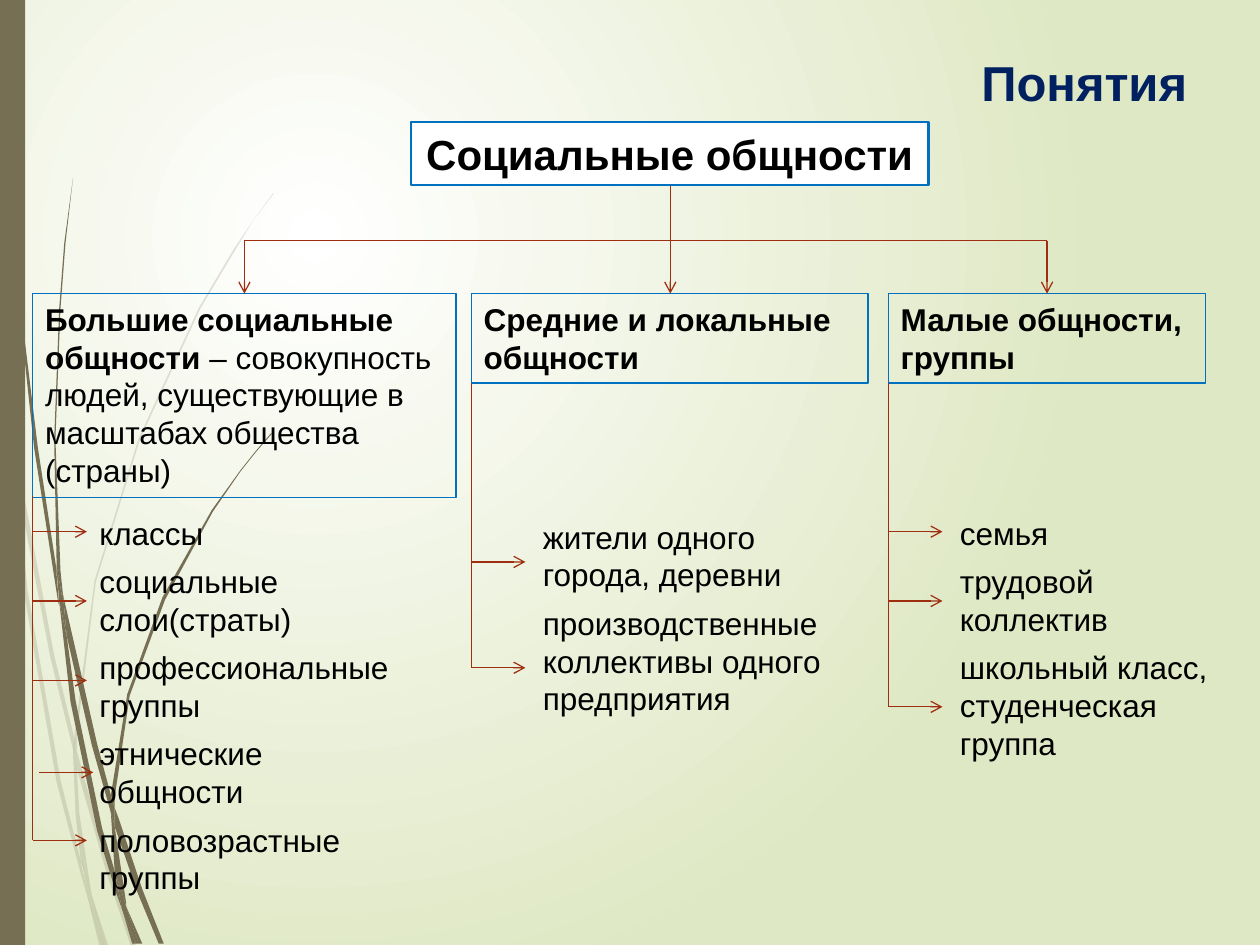
"""Build the slide on social communities: a three-branch diagram on a green backdrop."""
from lxml import etree
from pptx import Presentation
from pptx.dml.color import RGBColor
from pptx.enum.shapes import MSO_CONNECTOR, MSO_SHAPE
from pptx.enum.text import MSO_ANCHOR, MSO_AUTO_SIZE, PP_ALIGN
from pptx.oxml.ns import qn
from pptx.util import Inches, Pt

RECT, STRAIGHT = MSO_SHAPE.RECTANGLE, MSO_CONNECTOR.STRAIGHT
TOP, MIDDLE = MSO_ANCHOR.TOP, MSO_ANCHOR.MIDDLE
LEFT, CENTER, RIGHT = PP_ALIGN.LEFT, PP_ALIGN.CENTER, PP_ALIGN.RIGHT
COLORS = {"white": "FFFFFF", "green": "DFE8C4", "stalk": "766F54", "border": "0070C0",
          "arrow": "9E2E0F", "title": "002060", "text": "000000"}
RGB = {name: RGBColor.from_string(value) for name, value in COLORS.items()}


def add_text(tf, text, size=18, color="text", bold=False, align=LEFT, anchor=TOP,
             before=0, wrap=True, tail=""):
    tf.word_wrap = wrap
    tf.vertical_anchor = anchor
    for i, line in enumerate(text.split("\n")):
        p = tf.paragraphs[0] if i == 0 else tf.add_paragraph()
        p.alignment = align
        p.space_before = Pt(before)
        for words, is_bold in ((line, bold), (tail, False)):
            if words:
                r = p.add_run()
                r.text = words
                r.font.name = "Arial"
                r.font.size = Pt(size)
                r.font.bold = is_bold
                r.font.color.rgb = RGB[color]


def add_line(x1, y1, x2, y2, arrow=True):
    c = s.shapes.add_connector(STRAIGHT, Inches(x1), Inches(y1), Inches(x2), Inches(y2))
    c.line.color.rgb = RGB["arrow"]
    c.line.width = Pt(0.75)
    if arrow:
        etree.SubElement(c.line._get_or_add_ln(), qn("a:tailEnd"), type="arrow")
    etree.SubElement(c._element.spPr, qn("a:effectLst"))


prs = Presentation()
prs.slide_width, prs.slide_height = Inches(10), Inches(7.5)
s = prs.slides.add_slide(prs.slide_layouts[5])

fill = s.background.fill
fill.gradient()
for stop, name, position in zip(fill.gradient_stops, ("white", "green"), (0, 1)):
    stop.color.rgb = RGB[name]
    stop.position = position
grad = s._element.find(".//" + qn("a:gradFill"))
grad.remove(grad.find(qn("a:lin")))
circle = etree.SubElement(grad, qn("a:path"), path="circle")
etree.SubElement(circle, qn("a:fillToRect"), l="50000", t="50000", r="100000", b="100000")

pale_stalks = [
    [(.08, 3.5), (.06, 3.22), (0, 2.82), (0, 2.99), (.07, 3.44)],
    [(.4, 5.22), (.59, 5.99), (.59, 5.86), (.43, 5.2), (.1, 3.45), (.12, 3.76)],
    [(.64, 6.07), (.61, 5.96), (.61, 6.1), (.85, 6.94), (1.04, 7.51), (1.08, 7.51), (.88, 6.92)],
    [(.83, 7.51), (.86, 7.51), (.73, 7.11)],
    [(.64, 6.83), (.48, 6.19), (.22, 4.69), (.12, 3.76), (.08, 3.5), (.19, 4.7), (.45, 6.21),
     (.64, 6.93), (.7, 7.14), (.69, 7.07)],
    [(.58, 5.99), (.6, 6.46), (.64, 6.83), (.67, 6.92), (.73, 7.11), (.72, 7.06), (.63, 6.46),
     (.61, 6.1), (.61, 6.08)],
    [(.61, 5.84), (.76, 4.62), (1.11, 3.49), (1.59, 2.45), (1.87, 1.98), (2.01, 1.75),
     (2.17, 1.54), (2.17, 1.53), (2.01, 1.75), (1.86, 1.97), (1.58, 2.44), (1.1, 3.48),
     (.75, 4.61), (.59, 5.84), (.59, 5.86), (.61, 5.96)],
    [(.7, 7.14), (.79, 7.51), (.82, 7.51)],
    [(.61, 6.08), (.61, 6.1), (.61, 5.96), (.59, 5.86), (.58, 5.99)],
    [(.67, 6.92), (.65, 6.83), (.69, 7.07), (.7, 7.14), (.82, 7.51), (.83, 7.51), (.73, 7.11)],
]
dark_stalks = [
    [(.05, 1.1), (.14, 2.33), (.27, 3.55), (.46, 4.77), (.47, 4.81), (.45, 4.57), (.45, 4.53),
     (.3, 3.55), (.15, 2.32), (.06, 1.09), (.04, .48), (.03, 0), (.02, 0), (.03, .48)],
    [(.73, 5.92), (.88, 6.45), (.88, 6.33), (.88, 6.31), (.77, 5.9), (.5, 4.72), (.53, 5.05)],
    [(.94, 6.49), (.91, 6.41), (.91, 6.56), (1.09, 7.08), (1.26, 7.49), (1.3, 7.49), (1.13, 7.06)],
    [(.91, 6.91), (.81, 6.57), (.6, 5.56), (.53, 5.05), (.47, 4.77), (.56, 5.57), (.77, 6.59),
     (.92, 7.08), (.97, 7.22), (.96, 7.17)],
    [(.5, 4.72), (.48, 4.53), (.44, 3.49), (.48, 2.45), (.52, 1.93), (.58, 1.41), (.51, 1.93),
     (.47, 2.45), (.43, 3.49), (.45, 4.49), (.49, 4.72)],
    [(1.1, 7.49), (1.13, 7.49), (1, 7.19)],
    [(.47, 4.77), (.53, 5.05), (.5, 4.72), (.49, 4.72), (.45, 4.49), (.45, 4.53)],
    [(.91, 6.33), (1.03, 5.52), (1.31, 4.76), (1.69, 4.06), (1.91, 3.74), (2.03, 3.59),
     (2.16, 3.44), (2.15, 3.44), (2.03, 3.58), (1.91, 3.73), (1.68, 4.05), (1.29, 4.74),
     (1.01, 5.51), (.88, 6.31), (.91, 6.41)],
    [(.97, 7.22), (1.05, 7.49), (1.08, 7.49)],
    [(.88, 6.45), (.91, 6.91), (.96, 7.06), (1, 7.19), (1, 7.16), (.91, 6.56), (.9, 6.51)],
    [(.88, 6.45), (.9, 6.51), (.91, 6.56), (.91, 6.41), (.88, 6.31), (.88, 6.33)],
    [(.96, 7.06), (.91, 6.91), (.96, 7.17), (.97, 7.22), (1.08, 7.49), (1.1, 7.49), (1, 7.19)],
]
for stalks, alpha in ((pale_stalks, 20), (dark_stalks, 100)):
    for outline in stalks:
        points = [(Inches(x), Inches(y)) for x, y in outline]
        fb = s.shapes.build_freeform(*points[0])
        fb.add_line_segments(points[1:], close=True)
        sp = fb.convert_to_shape()
        sp.shadow.inherit = False
        sp.fill.solid()
        sp.fill.fore_color.rgb = RGB["stalk"]
        sp.line.fill.background()
        if alpha < 100:
            color = sp._element.spPr.find(".//" + qn("a:srgbClr"))
            etree.SubElement(color, qn("a:alpha"), val=str(alpha * 1000))

bar = s.shapes.add_shape(RECT, 0, 0, Inches(0.2), prs.slide_height)
bar.shadow.inherit = False
bar.fill.solid()
bar.fill.fore_color.rgb = RGB["stalk"]
bar.line.fill.background()

title = s.shapes.title
title.left, title.top, title.width, title.height = (Inches(v) for v in (3.71, 0.39, 5.92, 0.58))
add_text(title.text_frame, "Понятия ", size=28, color="title", bold=True, align=RIGHT,
         anchor=MIDDLE)
title.text_frame.paragraphs[0].line_spacing = 0.9

heading = dict(size=24, align=CENTER, wrap=False)
boxes = [
    (3.26, 0.97, 4.11, 0.5, "Социальные общности", heading),
    (0.26, 2.33, 3.36, 1.62, "Большие социальные общности ",
     dict(tail="‒ совокупность людей, существующие в масштабах общества (страны)")),
    (3.74, 2.33, 3.15, 0.71, "Средние и локальные общности", {}),
    (7.05, 2.33, 2.52, 0.71, "Малые общности, группы", {}),
]
for x, y, w, h, text, style in boxes:
    sp = s.shapes.add_shape(RECT, Inches(x), Inches(y), Inches(w), Inches(h))
    sp.shadow.inherit = False
    sp.line.color.rgb = RGB["border"]
    if style is heading:
        sp.fill.solid()
        sp.fill.fore_color.rgb = RGB["white"]
        sp.line.width = Pt(1.25)
    else:
        sp.fill.background()
        sp.line.width = Pt(0.75)
    add_text(sp.text_frame, text, bold=True, **style)
    sp.text_frame.auto_size = MSO_AUTO_SIZE.SHAPE_TO_FIT_TEXT

lists = [
    (0.69, 4.03, 2.5, 3.16, "классы\nсоциальные слои(страты)\nпрофессиональные группы\n"
     "этнические общности\nполовозрастные группы"),
    (4.21, 4.06, 2.5, 2, "жители одного города, деревни\n"
     "производственные коллективы одного предприятия"),
    (7.52, 4.03, 2.19, 2.09, "семья\nтрудовой коллектив\nшкольный класс, студенческая группа"),
]
for x, y, w, h, text in lists:
    tb = s.shapes.add_textbox(Inches(x), Inches(y), Inches(w), Inches(h))
    add_text(tb.text_frame, text, before=6)
    tb.text_frame.auto_size = MSO_AUTO_SIZE.SHAPE_TO_FIT_TEXT

add_line(1.94, 1.91, 8.31, 1.91, arrow=False)
for x, y in ((5.32, 1.48), (1.94, 1.91), (8.31, 1.91)):
    add_line(x, y, x, 2.33)

branches = [
    (0.26, 3.94, [(0, 4.22), (0, 4.77), (0, 5.4), (0.05, 6.13), (0, 6.67)]),
    (3.74, 3.04, [(0, 4.46), (0, 5.3)]),
    (7.05, 3.04, [(0, 4.22), (0, 4.77), (0, 5.61)]),
]
for x, top, items in branches:
    add_line(x, top, x, items[-1][1], arrow=False)
    for shift, y in items:
        add_line(x + shift, y, x + shift + 0.43, y)

prs.save("out.pptx")
